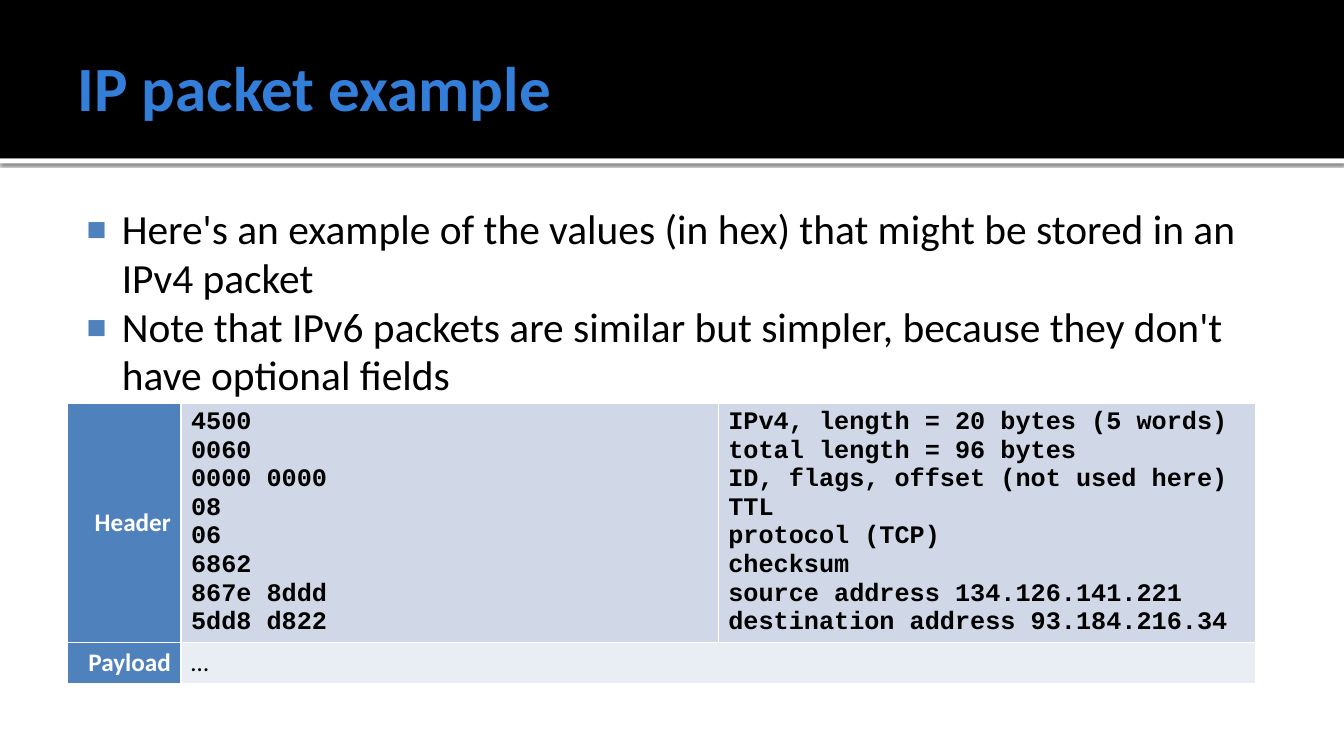
import pptx
import pptx.util
import pptx.dml.color
import pptx.enum.shapes
import pptx.enum.text
import pptx.oxml
import pptx.oxml.ns

Cm, Pt = pptx.util.Cm, pptx.util.Pt
MSO_ANCHOR, PP_ALIGN = pptx.enum.text.MSO_ANCHOR, pptx.enum.text.PP_ALIGN
NS = pptx.oxml.ns.nsdecls("a")
COLORS = {"black": "000000", "white": "FFFFFF", "title": "337ED9",
          "accent": "4F81BD", "header": "D0D8E8", "payload": "E9EDF4"}


def rgb(name):
    return pptx.dml.color.RGBColor.from_string(COLORS[name])


def add_run(p, text, size, color, font="Calibri", bold=False):
    r = p.add_run()
    r.text = text
    r.font.name, r.font.size, r.font.bold = font, Pt(size), bold
    r.font.color.rgb = rgb(color)


prs = pptx.Presentation()
prs.slide_width, prs.slide_height = Cm(33.87), Cm(19.05)
s = prs.slides.add_slide(prs.slide_layouts[1])

# Title band and the shadowed white rule below it, behind the text
bands = [(3.99, 0.13, "white"), (0, 3.99, "black")]
for i, (top, height, color) in enumerate(bands):
    sp = s.shapes.add_shape(pptx.enum.shapes.MSO_SHAPE.RECTANGLE,
                            0, Cm(top), prs.slide_width, Cm(height))
    sp.shadow.inherit = False
    sp.fill.solid()
    sp.fill.fore_color.rgb = rgb(color)
    sp.line.fill.background()
    if color == "white":
        effects = sp._element.spPr.find(pptx.oxml.ns.qn("a:effectLst"))
        effects.append(pptx.oxml.parse_xml(
            f'<a:outerShdw {NS} blurRad="{Pt(2.5)}" dist="{Pt(0.8)}" dir="5400000" rotWithShape="0">'
            f'<a:srgbClr val="{COLORS["black"]}"><a:alpha val="60000"/></a:srgbClr></a:outerShdw>'))
    s.shapes._spTree.insert(2 + i, sp._element)

# Title and body placeholders
title, body = s.shapes.title, s.placeholders[1]
places = [(title, 0.43, 3.48, MSO_ANCHOR.MIDDLE, (0.25, 0.13, 0.13, 0.13)),
          (body, 4.93, 4.6, MSO_ANCHOR.TOP, (0.15, 0.25, 0.25, 0.13))]
for sp, top, height, anchor, insets in places:
    sp.left, sp.top, sp.width, sp.height = Cm(1.7), Cm(top), Cm(30.48), Cm(height)
    tf = sp.text_frame
    tf.word_wrap = True
    tf.auto_size = pptx.enum.text.MSO_AUTO_SIZE.NONE
    tf.vertical_anchor = anchor
    tf.margin_left, tf.margin_top, tf.margin_right, tf.margin_bottom = map(Cm, insets)

p = title.text_frame.paragraphs[0]
p.alignment = PP_ALIGN.LEFT
add_run(p, "IP packet example", 45, "title", bold=True)

# Bulleted list
bullets = [
    "Here's an example of the values (in hex) that might be stored in an IPv4 packet",
    "Note that IPv6 packets are similar but simpler, because they don't have optional fields",
]
tf = body.text_frame
for i, text in enumerate(bullets):
    p = tf.add_paragraph() if i else tf.paragraphs[0]
    pPr = p._p.get_or_add_pPr()
    pPr.set("marL", str(Cm(1.22)))
    pPr.set("indent", str(Cm(-0.89)))
    for xml in (f'<a:buClr {NS}><a:srgbClr val="{COLORS["accent"]}"/></a:buClr>',
                f'<a:buSzPct {NS} val="80000"/>',
                f'<a:buFont {NS} typeface="Arial"/>',
                f'<a:buChar {NS} char="■"/>'):
        pPr.append(pptx.oxml.parse_xml(xml))
    p.space_before = Pt(0)
    p.line_spacing = 0.98
    add_run(p, text, 29.6, "black")

# Packet table: each field is a hex value and its meaning
fields = [
    ("4500", "IPv4, length = 20 bytes (5 words)"),
    ("0060", "total length = 96 bytes"),
    ("0000 0000", "ID, flags, offset (not used here)"),
    ("08", "TTL"),
    ("06", "protocol (TCP)"),
    ("6862", "checksum"),
    ("867e 8ddd", "source address 134.126.141.221"),
    ("5dd8 d822", "destination address 93.184.216.34"),
]
values, meanings = zip(*fields)
rows = [("Header", "header", [values, meanings]),
        ("Payload", "payload", [["…"], []])]
table = s.shapes.add_table(2, 3, Cm(1.7), Cm(10.17), Cm(29.94), Cm(7.02)).table
table.first_row = table.horz_banding = False
for col, width in zip(table.columns, (2.86, 13.54, 13.54)):
    col.width = Cm(width)
for row, height in zip(table.rows, (6, 1.02)):
    row.height = Cm(height)

for y, (label, fill, columns) in enumerate(rows):
    font = "Courier New" if label == "Header" else "Calibri"
    for x, lines in enumerate([[label], *columns]):
        cell = table.cell(y, x)
        cell.fill.solid()
        cell.fill.fore_color.rgb = rgb(fill if x else "accent")
        p = cell.text_frame.paragraphs[0]
        if x == 0:
            cell.vertical_anchor = MSO_ANCHOR.MIDDLE
            p.alignment = PP_ALIGN.RIGHT
            add_run(p, label, 18, "white", bold=True)
        else:
            for i, line in enumerate(lines):
                if i:
                    p.add_line_break()
                add_run(p, line, 18, "black", font, label == "Header")
        # White cell borders
        tcPr = cell._tc.get_or_add_tcPr()
        for i, side in enumerate(("lnL", "lnR", "lnT", "lnB")):
            tcPr.insert(i, pptx.oxml.parse_xml(
                f'<a:{side} {NS} w="{Pt(1)}"><a:solidFill>'
                f'<a:srgbClr val="{COLORS["white"]}"/></a:solidFill></a:{side}>'))
table.cell(1, 1).merge(table.cell(1, 2))

prs.save("out.pptx")
